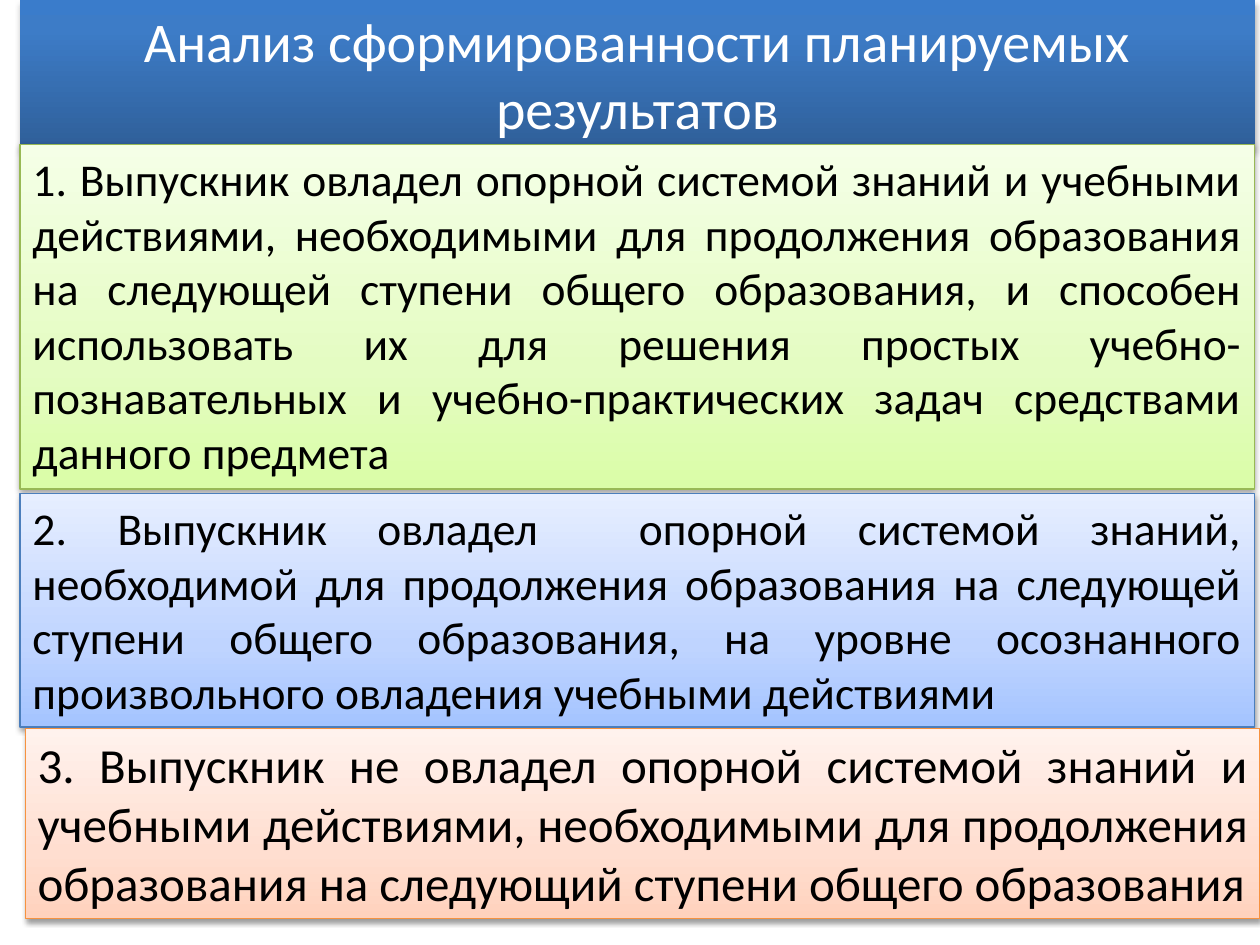
from copy import deepcopy

from lxml.etree import SubElement
from pptx import Presentation
from pptx.dml.color import RGBColor
from pptx.enum.text import MSO_AUTO_SIZE as AutoSize, PP_ALIGN as Align
from pptx.oxml.ns import qn
from pptx.util import Pt

WHITE = RGBColor(0xFF, 0xFF, 0xFF)
BLACK = RGBColor(0x00, 0x00, 0x00)
HEADING_BLUES = [RGBColor(0x2F, 0x5F, 0x99), RGBColor(0x3D, 0x7C, 0xC7), RGBColor(0x3A, 0x7C, 0xCB)]
GREENS = [RGBColor(0xDA, 0xFD, 0xA7), RGBColor(0xE4, 0xFC, 0xC2), RGBColor(0xF5, 0xFF, 0xE7)]
BLUES = [RGBColor(0xA4, 0xC4, 0xFF), RGBColor(0xBF, 0xD4, 0xFF), RGBColor(0xE6, 0xEE, 0xFF)]
ORANGES = [RGBColor(0xFF, 0xD2, 0xBD), RGBColor(0xFF, 0xDE, 0xD0), RGBColor(0xFF, 0xF2, 0xED)]
GREEN_EDGE = RGBColor(0x98, 0xB9, 0x55)
BLUE_EDGE = RGBColor(0x4B, 0x7E, 0xBC)
ORANGE_EDGE = RGBColor(0xF6, 0x92, 0x40)

LEFT = 11.5
WIDTH = 705.6

HEADING = "Анализ сформированности планируемых результатов"
LEVELS = [
    ("1. Выпускник овладел опорной системой знаний и учебными действиями, "
     "необходимыми для продолжения образования на следующей ступени общего "
     "образования, и способен использовать их для решения простых "
     "учебно-познавательных и учебно-практических задач средствами данного предмета",
     LEFT, 82.8, 196.6, 26, GREENS, GREEN_EDGE),
    ("2. Выпускник овладел  опорной системой знаний, необходимой для продолжения "
     "образования на следующей ступени общего образования, на уровне осознанного "
     "произвольного овладения учебными действиями",
     LEFT, 282.2, 133.2, 26, BLUES, BLUE_EDGE),
    ("3. Выпускник не овладел опорной системой знаний и учебными действиями, "
     "необходимыми для продолжения образования на следующий ступени общего образования",
     14.4, 416.2, 108.7, 28, ORANGES, ORANGE_EDGE),
]


class Panels:
    font_name = "Calibri"

    def __init__(self, slide):
        self.slide = slide

    def heading(self, text, left, top, height, size, colors):
        panel = self.panel(text, left, top, height, Align.CENTER, size, WHITE)
        self.gradient(panel, colors, 0.8)
        panel.line.fill.background()
        self.shadow(panel, 1.8, 35)

    def level(self, text, left, top, height, size, colors, edge):
        panel = self.panel(text, left, top, height, Align.JUSTIFY, size, BLACK)
        self.gradient(panel, colors, 0.35)
        panel.line.color.rgb = edge
        panel.line.width = Pt(0.75)
        self.shadow(panel, 1.6, 38)

    def panel(self, text, left, top, height, align, size, color):
        panel = self.slide.shapes.add_textbox(Pt(left), Pt(top), Pt(WIDTH), Pt(height))
        frame = panel.text_frame
        frame.text = text
        paragraph = frame.paragraphs[0]
        font = paragraph.runs[0].font
        font.color.rgb = color
        formats = [
            (frame, {"word_wrap": True, "auto_size": AutoSize.SHAPE_TO_FIT_TEXT}),
            (paragraph, {"alignment": align}),
            (font, {"name": self.font_name, "size": Pt(size)}),
        ]
        for target, values in formats:
            for name, value in values.items():
                setattr(target, name, value)
        return panel

    def gradient(self, panel, colors, middle):
        fill = panel.fill
        fill.gradient()
        fill.gradient_angle = 90
        stop_list = panel.element.spPr.find(".//" + qn("a:gsLst"))
        stop_list.append(deepcopy(stop_list[-1]))
        for stop, position, color in zip(fill.gradient_stops, (0, middle, 1), colors):
            stop.position = position
            stop.color.rgb = color

    def shadow(self, panel, distance, opacity):
        panel.shadow.inherit = False
        effects = panel.element.spPr.find(qn("a:effectLst"))
        outer = SubElement(effects, qn("a:outerShdw"), blurRad=str(Pt(3.1)),
                           dist=str(Pt(distance)), dir="5400000", rotWithShape="0")
        tint = SubElement(outer, qn("a:srgbClr"), val=str(BLACK))
        SubElement(tint, qn("a:alpha"), val=str(opacity * 1000))


def main():
    deck = Presentation()
    deck.slide_width, deck.slide_height = Pt(720), Pt(540)
    panels = Panels(deck.slides.add_slide(deck.slide_layouts[6]))
    panels.heading(HEADING, LEFT, 0, 85, 32, HEADING_BLUES)
    for level in LEVELS:
        panels.level(*level)
    deck.save("out.pptx")


if __name__ == "__main__":
    main()
